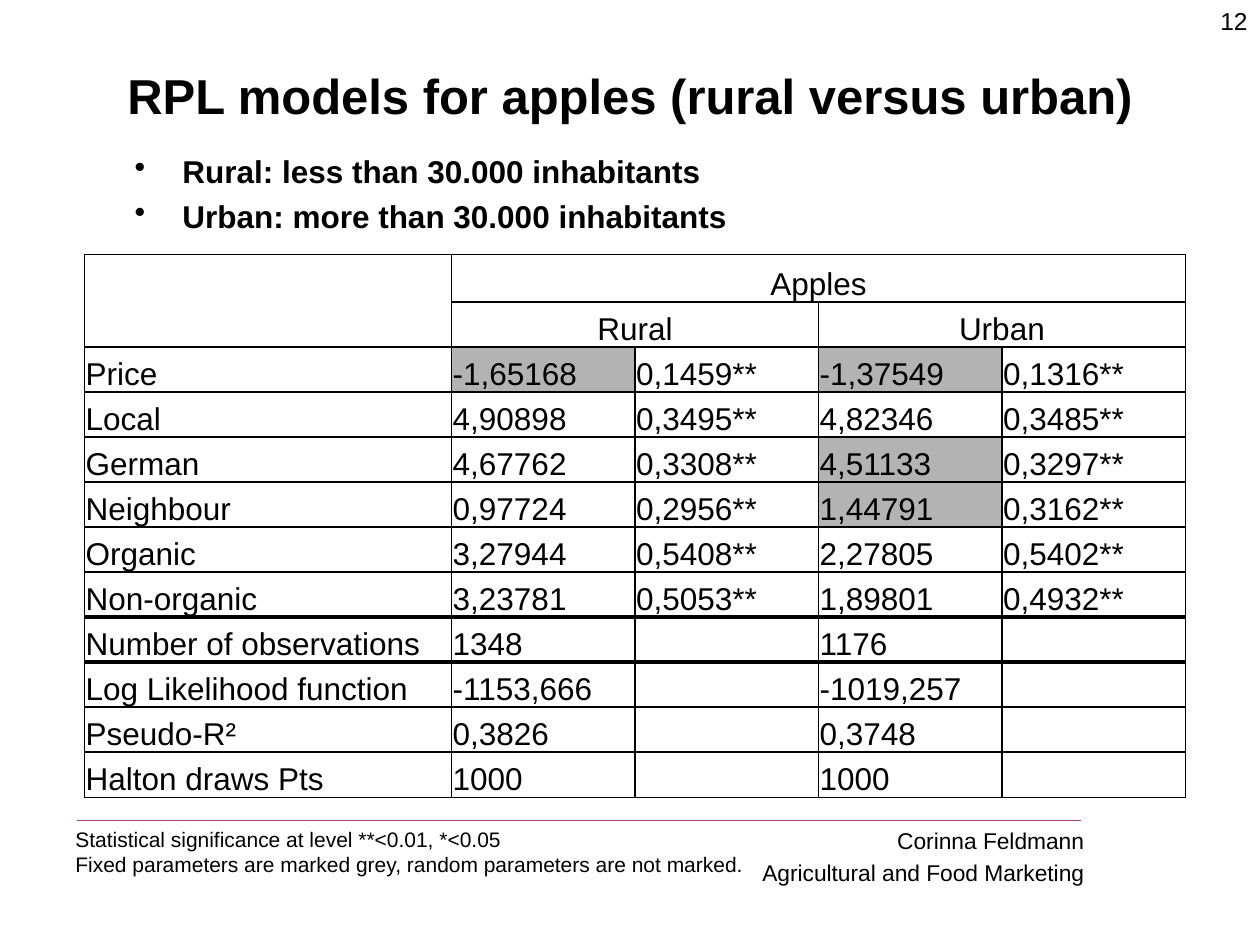
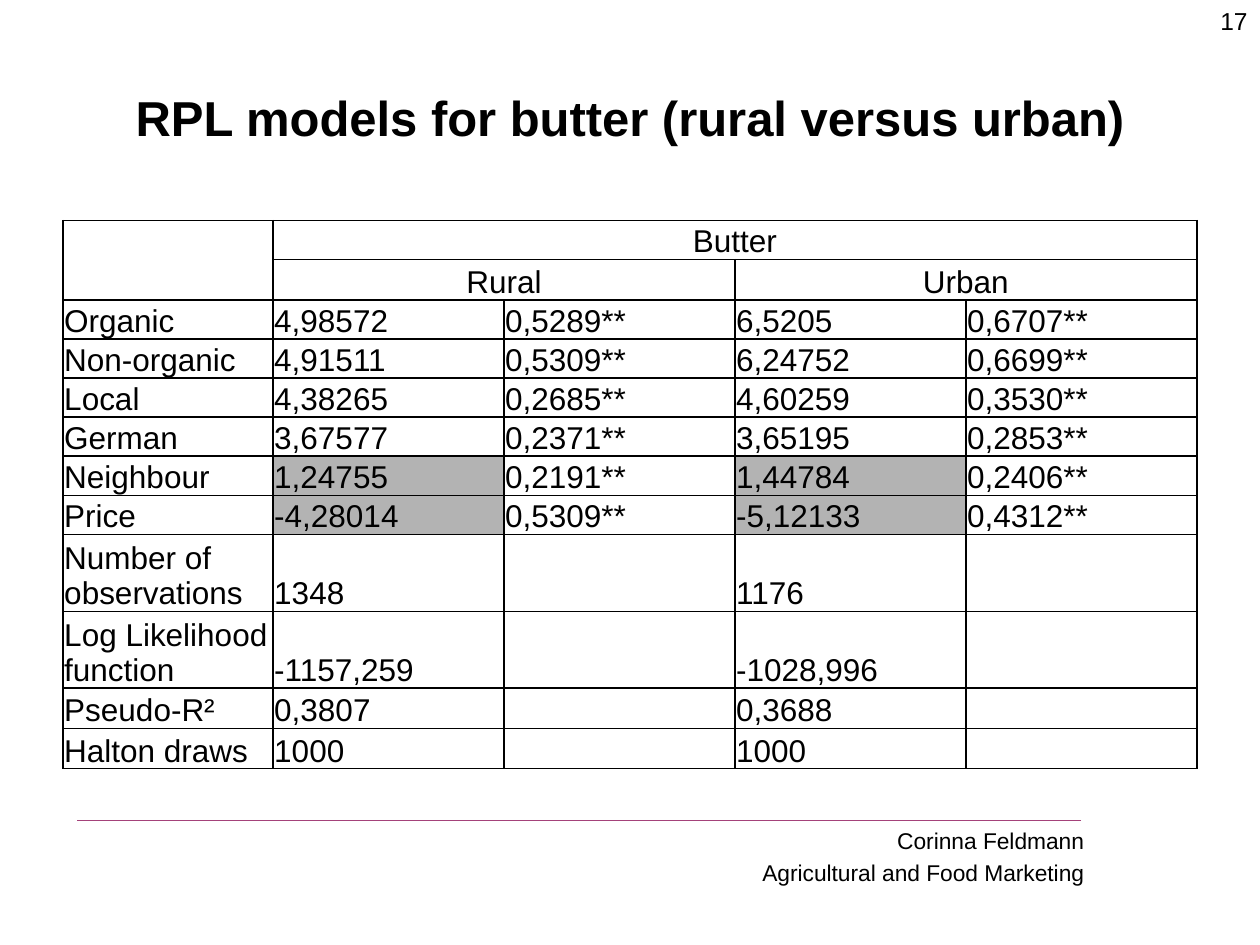
"""Build two slides of RPL model tables, rural versus urban."""
import lxml.etree
import pptx
import pptx.dml.color
import pptx.enum.shapes
import pptx.enum.text
import pptx.oxml
import pptx.oxml.ns
import pptx.util

COLORS = {"text": "000000", "border": "000000", "fixed": "B3B3B3", "rule": "A4427A"}
FONT = "Arial"
COLS, ROWS = 100, 75
FOOTER = ["Corinna Feldmann", "Agricultural and Food Marketing"]
SLIDES = [
    {
        "number": "12",
        "title": "RPL models for apples (rural versus urban)",
        "title_top": 1.3,
        "bullets": ["Rural: less than 30.000 inhabitants", "Urban: more than 30.000 inhabitants"],
        "notes": [
            "Statistical significance at level **<0.01, *<0.05",
            "Fixed parameters are marked grey, random parameters are not marked.",
        ],
        "product": "Apples",
        "place": (6.7, 20.2, 87.4, 43.1),
        "col_shares": [2, 1, 1, 1, 1],
        "row_shares": [1.05] + [1] * 11,
        "heavy_below": ["Non-organic", "Number of observations"],
        "fixed": ["-1,65168", "-1,37549", "4,51133", "1,44791"],
        "rows": [
            ("Price", "-1,65168", "0,1459**", "-1,37549", "0,1316**"),
            ("Local", "4,90898", "0,3495**", "4,82346", "0,3485**"),
            ("German", "4,67762", "0,3308**", "4,51133", "0,3297**"),
            ("Neighbour", "0,97724", "0,2956**", "1,44791", "0,3162**"),
            ("Organic", "3,27944", "0,5408**", "2,27805", "0,5402**"),
            ("Non-organic", "3,23781", "0,5053**", "1,89801", "0,4932**"),
            ("Number of observations", "1348", "", "1176", ""),
            ("Log Likelihood function", "-1153,666", "", "-1019,257", ""),
            ("Pseudo-R²", "0,3826", "", "0,3748", ""),
            ("Halton draws Pts", "1000", "", "1000", ""),
        ],
    },
    {
        "number": "17",
        "title": "RPL models for butter (rural versus urban)",
        "title_top": 3,
        "bullets": [],
        "notes": [],
        "product": "Butter",
        "place": (5, 17.5, 90, 41.3),
        "col_shares": [10, 11, 11, 11, 11],
        "row_shares": [29, 32] + [29] * 6 + [57, 57, 32, 32],
        "heavy_below": [],
        "fixed": ["1,24755", "1,44784", "-4,28014", "-5,12133"],
        "rows": [
            ("Organic", "4,98572", "0,5289**", "6,5205", "0,6707**"),
            ("Non-organic", "4,91511", "0,5309**", "6,24752", "0,6699**"),
            ("Local", "4,38265", "0,2685**", "4,60259", "0,3530**"),
            ("German", "3,67577", "0,2371**", "3,65195", "0,2853**"),
            ("Neighbour", "1,24755", "0,2191**", "1,44784", "0,2406**"),
            ("Price", "-4,28014", "0,5309**", "-5,12133", "0,4312**"),
            ("Number of observations", "1348", "", "1176", ""),
            ("Log Likelihood function", "-1157,259", "", "-1028,996", ""),
            ("Pseudo-R²", "0,3807", "", "0,3688", ""),
            ("Halton draws", "1000", "", "1000", ""),
        ],
    },
]

Pt, Inches = pptx.util.Pt, pptx.util.Inches
ALIGN, ANCHOR = pptx.enum.text.PP_ALIGN, pptx.enum.text.MSO_ANCHOR
prs = pptx.Presentation()
prs.slide_width, prs.slide_height = Inches(10), Inches(7.5)


def rgb(name):
    return pptx.dml.color.RGBColor.from_string(COLORS[name])


def grid(x, y, *size):
    units = (prs.slide_width / COLS, prs.slide_height / ROWS) * 2
    return [round(v * u) for v, u in zip((x, y, *size), units)]


def add_run(p, text, size, bold=False):
    r = p.add_run()
    r.text = text
    r.font.name, r.font.size, r.font.bold = FONT, Pt(size), bold
    r.font.color.rgb = rgb("text")


def add_text(s, place, lines, size, align=ALIGN.LEFT, anchor=ANCHOR.TOP, bold=False, gap=0, bullet=False):
    tf = s.shapes.add_textbox(*grid(*place)).text_frame
    tf.word_wrap, tf.vertical_anchor = True, anchor
    for i, line in enumerate(lines):
        p = tf.add_paragraph() if i else tf.paragraphs[0]
        p.alignment = align
        if i and gap:
            p.space_before = Pt(gap)
        if bullet:
            pPr = p._p.get_or_add_pPr()
            pPr.set("marL", str(Inches(0.38)))
            pPr.set("indent", str(-Inches(0.38)))
            lxml.etree.SubElement(pPr, pptx.oxml.ns.qn("a:buChar")).set("char", "•")
        add_run(p, line, size, bold)


def set_borders(cell, widths):
    tcPr = cell._tc.get_or_add_tcPr()
    for i, (side, width) in enumerate(zip("LRTB", widths)):
        tcPr.insert(i, pptx.oxml.parse_xml(
            f'<a:ln{side} {pptx.oxml.ns.nsdecls("a")} w="{Pt(width)}"><a:solidFill>'
            f'<a:srgbClr val="{COLORS["border"]}"/></a:solidFill></a:ln{side}>'))


def add_model_table(s, d):
    rows = [("", d["product"], "", "", ""), ("", "Rural", "", "Urban", ""), *d["rows"]]
    place = grid(*d["place"])
    table = s.shapes.add_table(len(rows), len(rows[0]), *place).table
    table.first_row = table.horz_banding = False
    for col, share in zip(table.columns, d["col_shares"]):
        col.width = round(place[2] * share / sum(d["col_shares"]))
    for row, share in zip(table.rows, d["row_shares"]):
        row.height = round(place[3] * share / sum(d["row_shares"]))
    above = 1
    for i, values in enumerate(rows):
        below = 3 if values[0] in d["heavy_below"] else 1
        for j, value in enumerate(values):
            cell = table.cell(i, j)
            cell.margin_left = cell.margin_right = cell.margin_top = Inches(0.01)
            cell.margin_bottom = 0
            cell.vertical_anchor = ANCHOR.BOTTOM
            if value in d["fixed"]:
                cell.fill.solid()
                cell.fill.fore_color.rgb = rgb("fixed")
            else:
                cell.fill.background()
            set_borders(cell, (1, 1, above, below))
            if value:
                p = cell.text_frame.paragraphs[0]
                p.alignment = ALIGN.CENTER if i < 2 else ALIGN.LEFT
                add_run(p, value, 18)
        above = below
    for top, left, bottom, right in [(0, 0, 1, 0), (0, 1, 0, 4), (1, 1, 1, 2), (1, 3, 1, 4)]:
        table.cell(top, left).merge(table.cell(bottom, right))


def add_footer(s):
    add_text(s, (45.3, 65.1, 41.7, 5.8), FOOTER, 13, ALIGN.RIGHT, gap=3)
    rule = s.shapes.add_connector(
        pptx.enum.shapes.MSO_CONNECTOR.STRAIGHT, *grid(85.8, 65.1), *grid(6.1, 65.1))
    rule.line.color.rgb, rule.line.width = rgb("rule"), Pt(0.75)
    lxml.etree.SubElement(rule._element.spPr, pptx.oxml.ns.qn("a:effectLst"))


def main():
    for d in SLIDES:
        s = prs.slides.add_slide(prs.slide_layouts[6])
        add_footer(s)
        add_text(s, (5, d["title_top"], 90, 12.5), [d["title"]], 28, ALIGN.CENTER, ANCHOR.MIDDLE, True)
        if d["bullets"]:
            add_text(s, (9.7, 11.6, 88.3, 7.9), d["bullets"], 18, bold=True, gap=4, bullet=True)
        add_model_table(s, d)
        if d["notes"]:
            add_text(s, (5, 65.1, 55.9, 5), d["notes"], 12)
        add_text(s, (94.9, 0, 5.1, 5.2), [d["number"]], 14, ALIGN.RIGHT)
    prs.save("out.pptx")


if __name__ == "__main__":
    main()
